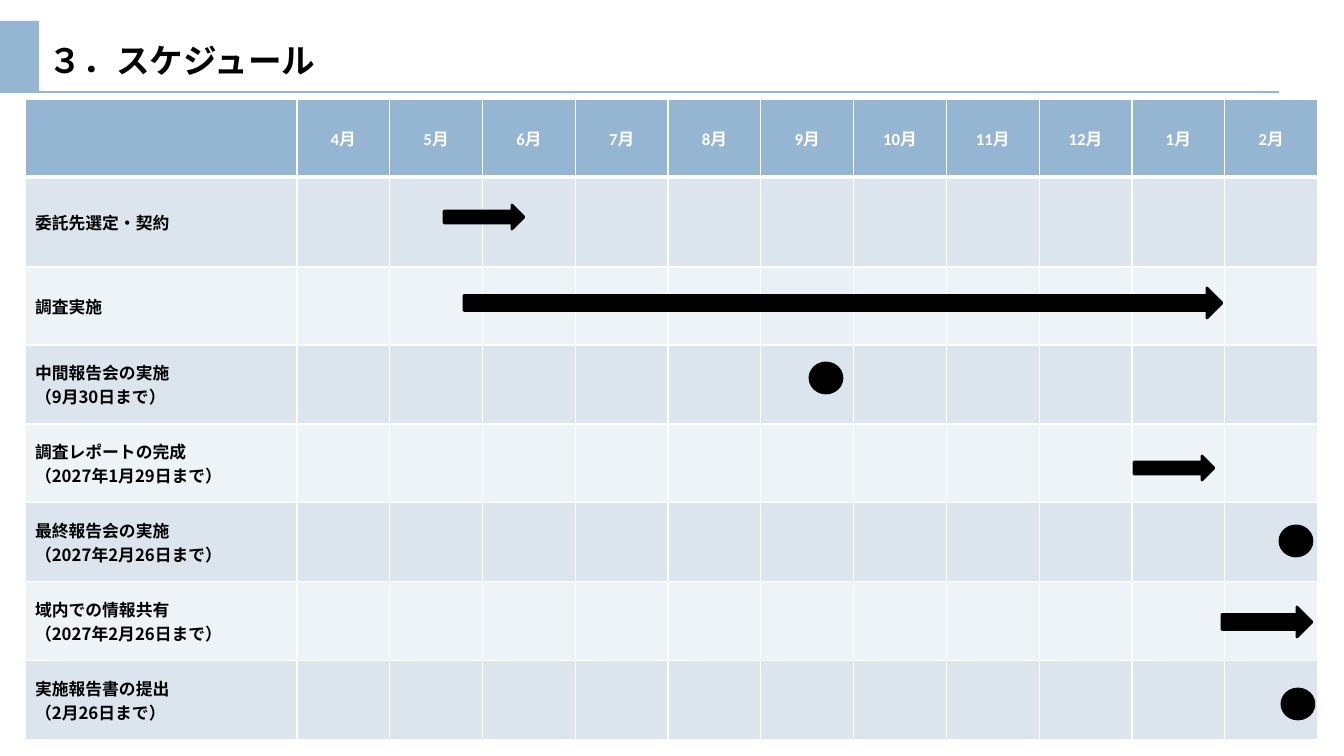
"""Build the yearly schedule slide with its table, arrows and milestones."""
from lxml.etree import SubElement
from pptx import Presentation
from pptx.dml.color import RGBColor
from pptx.enum.shapes import MSO_CONNECTOR as Connector, MSO_SHAPE as Shape
from pptx.enum.text import MSO_ANCHOR as Anchor, PP_ALIGN as Align
from pptx.oxml.ns import qn
from pptx.util import Pt

TITLE = "３．スケジュール"
MONTHS = ["4月", "5月", "6月", "7月", "8月", "9月", "10月", "11月", "12月", "1月", "2月"]
TASKS = [
    ["委託先選定・契約"],
    ["調査実施"],
    ["中間報告会の実施", "（9月30日まで）"],
    ["調査レポートの完成", "（2027年1月29日まで）"],
    ["最終報告会の実施", "（2027年2月26日まで）"],
    ["域内での情報共有", "（2027年2月26日まで）"],
    ["実施報告書の提出", "（2月26日まで）"],
]
ARROWS = [(444, 205, 80, 24), (464, 288, 758, 30), (1134, 456, 80, 24), (1222, 607, 90, 30)]
DOTS = [(1280, 526), (1282, 689), (810, 363)]
DOT_SIZE = (32, 30)
ROW_HEIGHTS = [78, 90, 78] + [79] * 5
TABLE_LEFT, TABLE_TOP, TABLE_WIDTH, LABEL_WIDTH = 25, 99, 1293, 272
BLUE, BLACK, WHITE = "94B6D2", "000000", "FFFFFF"
BANDS = ["DCE5EE", "EEF3F7"]
SEPTEMBER_SURVEY = (2, 6)
SEPTEMBER_FILL = "EAF0F6"
JAPANESE = "Noto Sans CJK JP"
SCALE = 914400 / 100.8


def emu(px):
    return round(px * SCALE)


def color(value):
    return RGBColor.from_string(value)


def write(frame, lines, font, size, ink, align=Align.LEFT):
    frame.word_wrap = True
    for index, line in enumerate(lines):
        para = frame.paragraphs[0] if index == 0 else frame.add_paragraph()
        para.alignment = align
        span = para.add_run()
        span.text = line
        span.font.name, span.font.size, span.font.bold = font, Pt(size), True
        span.font.color.rgb = color(ink)
        SubElement(span.font._element, qn("a:ea"), typeface=JAPANESE)


def add_borders(cell, row):
    properties = cell._tc.get_or_add_tcPr()
    widths = {"L": 1, "R": 1, "T": 3 if row == 1 else 1, "B": 3 if row == 0 else 1}
    for index, (side, width) in enumerate(widths.items()):
        edge = SubElement(properties, qn(f"a:ln{side}"), w=str(Pt(width)))
        SubElement(SubElement(edge, qn("a:solidFill")), qn("a:srgbClr"), val=WHITE)
        properties.insert(index, edge)


def add_solid(page, kind, bounds, fill, outlined=True):
    shape = page.shapes.add_shape(kind, *map(emu, bounds))
    shape.shadow.inherit = False
    shape.fill.solid()
    shape.fill.fore_color.rgb = color(fill)
    if outlined:
        shape.line.color.rgb = color(fill)
        shape.line.width = Pt(2)
        SubElement(shape._element.spPr.find(qn("a:ln")), qn("a:round"))
    else:
        shape.line.fill.background()


def add_schedule(page):
    bounds = (TABLE_LEFT, TABLE_TOP, TABLE_WIDTH, sum(ROW_HEIGHTS))
    table = page.shapes.add_table(len(TASKS) + 1, len(MONTHS) + 1, *map(emu, bounds)).table
    table.first_row = table.horz_banding = False
    month_width = (TABLE_WIDTH - LABEL_WIDTH) / len(MONTHS)
    for index, column in enumerate(table.columns):
        column.width = emu(month_width if index else LABEL_WIDTH)
    for row, height in enumerate(ROW_HEIGHTS):
        table.rows[row].height = emu(height)
        for column in range(len(MONTHS) + 1):
            cell = table.cell(row, column)
            cell.vertical_anchor = Anchor.MIDDLE
            fill = BANDS[(row - 1) % 2] if row else BLUE
            if (row, column) == SEPTEMBER_SURVEY:
                fill = SEPTEMBER_FILL
            cell.fill.solid()
            cell.fill.fore_color.rgb = color(fill)
            add_borders(cell, row)
            if row == 0 and column:
                write(cell.text_frame, [MONTHS[column - 1]], "Calibri", 12, WHITE, Align.CENTER)
            elif row and column == 0:
                write(cell.text_frame, TASKS[row - 1], JAPANESE, 12, BLACK)


def main():
    deck = Presentation()
    deck.slide_width, deck.slide_height = emu(1344), emu(756)
    page = deck.slides.add_slide(deck.slide_layouts[6])

    box = page.shapes.add_textbox(*map(emu, (39, 24, 922, 72)))
    box.text_frame.vertical_anchor = Anchor.MIDDLE
    write(box.text_frame, [TITLE], "Arial", 24, BLACK)
    add_solid(page, Shape.RECTANGLE, (0, 21, 39, 71), BLUE, outlined=False)

    add_schedule(page)
    for bounds in ARROWS:
        add_solid(page, Shape.RIGHT_ARROW, bounds, BLACK)

    rule = page.shapes.add_connector(Connector.STRAIGHT, *map(emu, (0, 92, 1279, 92)))
    rule.line.color.rgb = color(BLUE)
    rule.line.width = Pt(2)
    SubElement(rule._element.spPr, qn("a:effectLst"))

    for position in DOTS:
        add_solid(page, Shape.FLOWCHART_CONNECTOR, position + DOT_SIZE, BLACK)
    deck.save("out.pptx")


if __name__ == "__main__":
    main()
